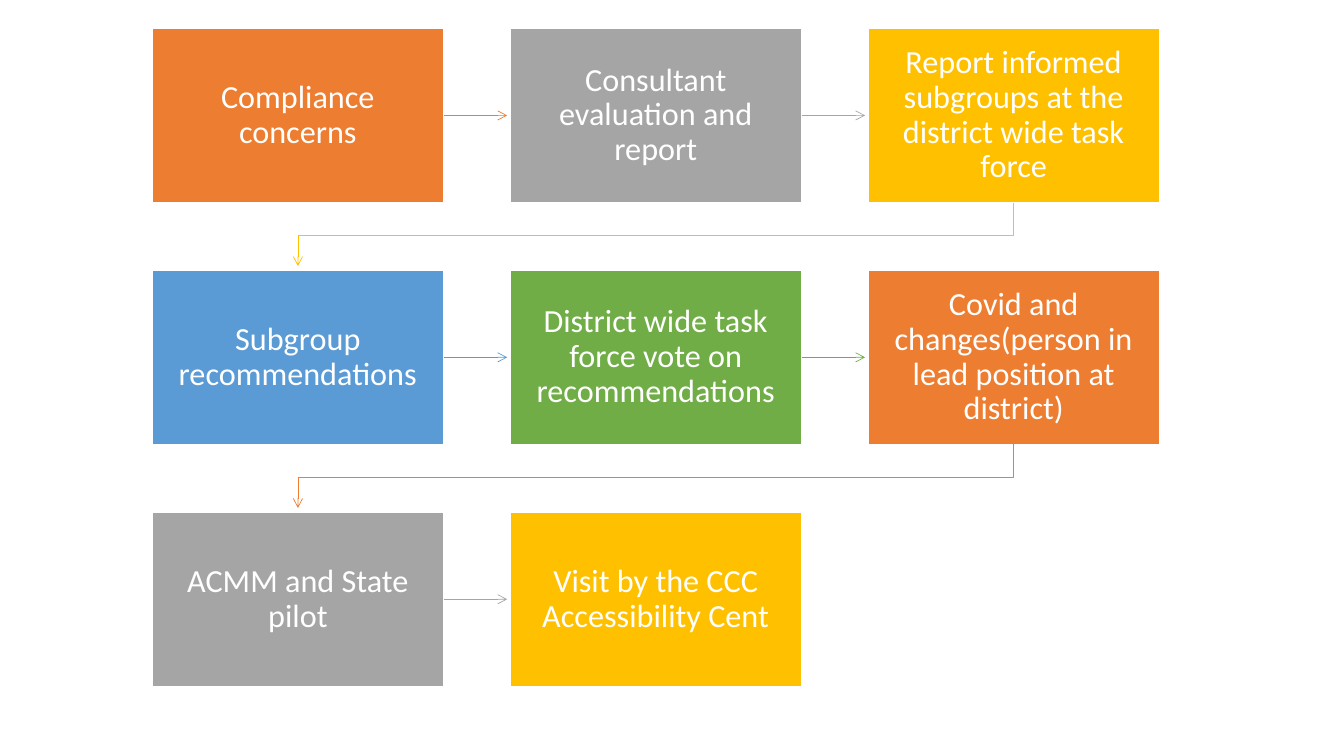
from dataclasses import dataclass

from lxml import etree
from pptx import Presentation, util as u
from pptx.dml.color import RGBColor
from pptx.enum import shapes, text
from pptx.oxml import ns

ORANGE = RGBColor(0xED, 0x7D, 0x31)
GRAY = RGBColor(0xA5, 0xA5, 0xA5)
GOLD = RGBColor(0xFF, 0xC0, 0x00)
BLUE = RGBColor(0x5B, 0x9B, 0xD5)
GREEN = RGBColor(0x70, 0xAD, 0x47)
WHITE = RGBColor(0xFF, 0xFF, 0xFF)

LEFT, TOP = 1.51, 0.28
WIDTH, HEIGHT = 2.89, 1.73
PITCH_X, PITCH_Y = 3.55, 2.4
COLS = 3
REACH = 0.63
BEND = 0.33


@dataclass(frozen=True)
class Step:
    label: str
    color: RGBColor


STEPS = [
    Step("Compliance concerns", ORANGE),
    Step("Consultant evaluation and report", GRAY),
    Step("Report informed subgroups at the district wide task force", GOLD),
    Step("Subgroup recommendations", BLUE),
    Step("District wide task force vote on recommendations", GREEN),
    Step("Covid and changes(person in lead position at district)", ORANGE),
    Step("ACMM and State pilot", GRAY),
    Step("Visit by the CCC Accessibility Cent", GOLD),
]


def put_text(shape, words: str, *, size: float = 23, font: str = "Calibri",
             color: RGBColor = WHITE) -> None:
    frame = shape.text_frame
    frame.word_wrap = True
    frame.vertical_anchor = text.MSO_ANCHOR.MIDDLE
    frame.margin_left = frame.margin_right = u.Inches(0.14)
    frame.margin_top = frame.margin_bottom = u.Inches(0.15)
    para = frame.paragraphs[0]
    para.alignment = text.PP_ALIGN.CENTER
    para.line_spacing = 0.9
    run = para.add_run()
    run.text = words
    run.font.size = u.Pt(size)
    run.font.name = font
    run.font.color.rgb = color


def add_box(slide, step: Step, left: float, top: float):
    box = slide.shapes.add_shape(
        shapes.MSO_SHAPE.RECTANGLE, u.Inches(left), u.Inches(top),
        u.Inches(WIDTH), u.Inches(HEIGHT))
    box.shadow.inherit = False
    box.fill.solid()
    box.fill.fore_color.rgb = step.color
    box.line.color.rgb = WHITE
    box.line.width = u.Pt(1)
    put_text(box, step.label)
    return box


def style_arrow(arrow, color: RGBColor) -> None:
    arrow.line.color.rgb = color
    arrow.line.width = u.Pt(0.5)
    line = arrow.line._get_or_add_ln()
    etree.SubElement(line, ns.qn("a:tailEnd"), type="arrow")


def add_link(slide, box, color: RGBColor, left: float, top: float) -> None:
    start, mid = left + WIDTH, top + HEIGHT / 2
    link = slide.shapes.add_connector(
        shapes.MSO_CONNECTOR.STRAIGHT, u.Inches(start), u.Inches(mid),
        u.Inches(start + REACH), u.Inches(mid))
    link.begin_connect(box, 3)
    style_arrow(link, color)
    etree.SubElement(link._element.spPr, ns.qn("a:effectLst"))


def add_turn(slide, color: RGBColor, left: float, top: float) -> None:
    start, end = left + WIDTH / 2, LEFT + WIDTH / 2
    base = top + HEIGHT
    points = [(start, base), (start, base + BEND),
              (end, base + BEND), (end, base + REACH)]
    spots = [(u.Inches(x), u.Inches(y)) for x, y in points]
    pen = slide.shapes.build_freeform(*spots[0])
    pen.add_line_segments(spots[1:], close=False)
    turn = pen.convert_to_shape()
    turn.fill.background()
    style_arrow(turn, color)
    turn.shadow.inherit = False


def main() -> None:
    deck = Presentation()
    deck.slide_width = u.Inches(13.33)
    deck.slide_height = u.Inches(7.5)
    slide = deck.slides.add_slide(deck.slide_layouts[6])
    for i, step in enumerate(STEPS):
        row, col = divmod(i, COLS)
        left, top = LEFT + col * PITCH_X, TOP + row * PITCH_Y
        box = add_box(slide, step, left, top)
        if i == len(STEPS) - 1:
            continue
        if col == COLS - 1:
            add_turn(slide, step.color, left, top)
        else:
            add_link(slide, box, step.color, left, top)
    deck.save("out.pptx")


if __name__ == "__main__":
    main()
